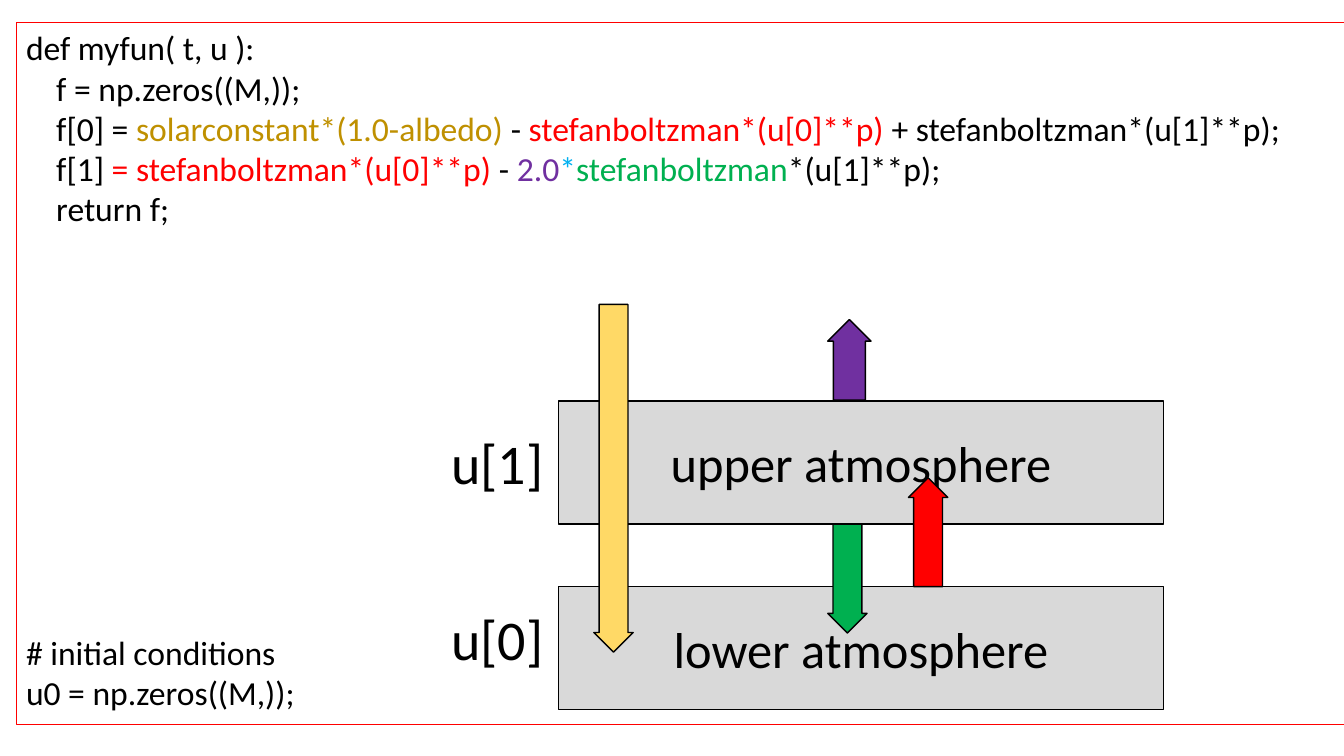
from pptx import Presentation
from pptx.dml.color import RGBColor
from pptx.enum import shapes, text
from pptx.util import Inches, Pt

BLACK = RGBColor(0x00, 0x00, 0x00)
GREY = RGBColor(0xD9, 0xD9, 0xD9)
RED = RGBColor(0xFF, 0x00, 0x00)
GOLD = RGBColor(0xBF, 0x90, 0x00)
YELLOW = RGBColor(0xFF, 0xD9, 0x66)
PURPLE = RGBColor(0x70, 0x30, 0xA0)
BLUE = RGBColor(0x00, 0xB0, 0xF0)
GREEN = RGBColor(0x00, 0xB0, 0x50)

CODE_INDENT = Inches(0.3)
CODE_GAP = Pt(288)
CODE = [
    (0, 0, [("def myfun( t, u ):", BLACK)]),
    (1, 0, [("f = np.zeros((M,));", BLACK)]),
    (1, 0, [("f[0] = ", BLACK), ("solarconstant*(1.0-albedo) ", GOLD), ("- ", BLACK),
            ("stefanboltzman*(u[0]**p) ", RED), ("+ stefanboltzman*(u[1]**p);", BLACK)]),
    (1, 0, [("f[1] ", BLACK), ("= stefanboltzman*(u[0]**p) ", RED), ("- ", BLACK),
            ("2.0", PURPLE), ("*", BLUE), ("stefanboltzman", GREEN), ("*(u[1]**p);", BLACK)]),
    (1, 0, [("return f;", BLACK)]),
    (0, CODE_GAP, [("# initial conditions", BLACK)]),
    (0, 0, [("u0 = np.zeros((M,));", BLACK)]),
]
LAYERS = [("lower atmosphere", 5.82), ("upper atmosphere", 3.98)]
ARROWS = [
    (5.89, 3.02, 0.39, 3.45, 180, YELLOW),
    (8.21, 3.17, 0.43, 0.8, 0, PURPLE),
    (8.21, 5.2, 0.39, 1.08, 180, GREEN),
    (9.01, 4.74, 0.39, 1.08, 0, RED),
]
LABELS = [("u[0]", 5.95), ("u[1]", 4.2)]


def apply(obj, formats):
    for name, value in formats.items():
        setattr(obj, name, value)


def add_run(p, content, size, color=BLACK):
    r = p.add_run()
    r.text = content
    apply(r.font, {"name": "Calibri", "size": Pt(size)})
    r.font.color.rgb = color


def add_box(slide, kind, box, fill=None, line=BLACK, width=1):
    sp = slide.shapes.add_shape(kind, *map(Inches, box))
    sp.shadow.inherit = False
    if fill is None:
        sp.fill.background()
    else:
        sp.fill.solid()
        sp.fill.fore_color.rgb = fill
    sp.line.color.rgb = line
    sp.line.width = Pt(width)
    return sp


def add_code(slide):
    sp = add_box(slide, shapes.MSO_SHAPE.RECTANGLE, (0.16, 0.22, 13.5, 6.97),
                 line=RED, width=0.75)
    tf = sp.text_frame
    apply(tf, {"word_wrap": True, "vertical_anchor": text.MSO_ANCHOR.TOP})
    for i, (level, gap, runs) in enumerate(CODE):
        p = tf.add_paragraph() if i else tf.paragraphs[0]
        apply(p, {"alignment": text.PP_ALIGN.LEFT, "space_before": gap})
        p._p.get_or_add_pPr().set("marL", str(level * CODE_INDENT))
        for content, color in runs:
            add_run(p, content, 24, color)


def add_layer(slide, name, top):
    sp = add_box(slide, shapes.MSO_SHAPE.RECTANGLE, (5.54, top, 6, 1.22), GREY)
    tf = sp.text_frame
    apply(tf, {"word_wrap": True, "vertical_anchor": text.MSO_ANCHOR.MIDDLE})
    p = tf.paragraphs[0]
    p.alignment = text.PP_ALIGN.CENTER
    add_run(p, name, 36)


def add_arrow(slide, left, top, width, height, rotation, color):
    sp = add_box(slide, shapes.MSO_SHAPE.UP_ARROW, (left, top, width, height), color)
    sp.rotation = rotation
    sp.adjustments[0] = 0.735
    sp.adjustments[1] = 0.5


def add_label(slide, name, top):
    sp = slide.shapes.add_textbox(*map(Inches, (4.38, top, 1.24, 0.77)))
    tf = sp.text_frame
    tf.word_wrap = True
    add_run(tf.paragraphs[0], name, 40)


def main():
    prs = Presentation()
    apply(prs, {"slide_width": Inches(13.33), "slide_height": Inches(7.5)})
    slide = prs.slides.add_slide(prs.slide_layouts[6])
    add_code(slide)
    for layer in LAYERS:
        add_layer(slide, *layer)
    for arrow in ARROWS:
        add_arrow(slide, *arrow)
    for label in LABELS:
        add_label(slide, *label)
    prs.save("out.pptx")


if __name__ == "__main__":
    main()
